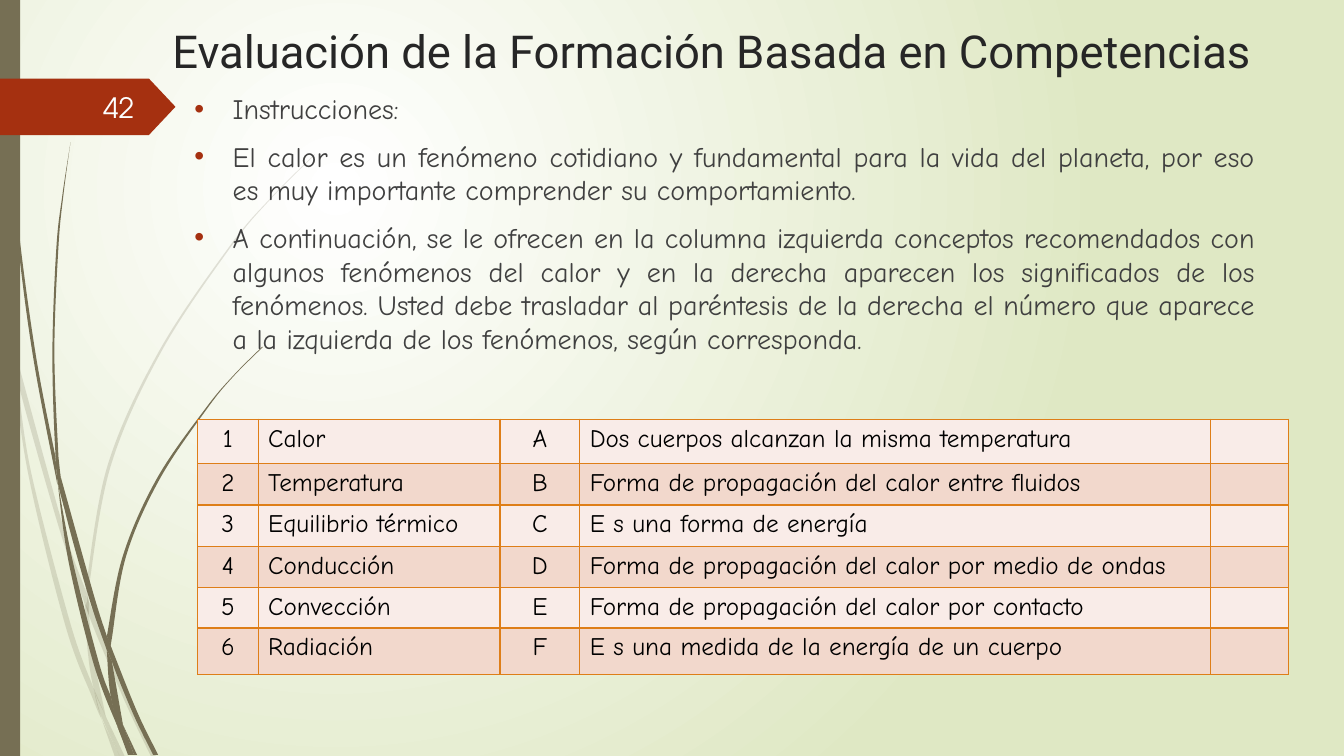
from pptx import Presentation
from pptx.dml.color import RGBColor
from pptx.enum.shapes import MSO_SHAPE
from pptx.enum.text import MSO_ANCHOR, PP_ALIGN
from pptx.oxml.xmlchemy import OxmlElement
from pptx.util import Inches, Pt

RECTANGLE, PENTAGON = MSO_SHAPE.RECTANGLE, MSO_SHAPE.PENTAGON
TOP, MIDDLE = MSO_ANCHOR.TOP, MSO_ANCHOR.MIDDLE
LEFT, CENTER, RIGHT, JUSTIFY = PP_ALIGN.LEFT, PP_ALIGN.CENTER, PP_ALIGN.RIGHT, PP_ALIGN.JUSTIFY
BODY_FONT, TITLE_FONT, NUMBER_FONT = "Comic Neue", "Roboto", "TeX Gyre Adventor"
OLIVE, RUST, ORANGE = "766F54", "A53010", "DE7E18"
ROW_FILLS = ["F9ECE8", "F2D8CC"]

# Each blade of grass: one edge downwards, the other edge back up
FAINT_BLADES = [
    ([(0, 2.82), (0, 2.99)], [(0.1, 3.44), (0.11, 3.5), (0.09, 3.22), (0, 2.82)]),
    ([(0.14, 3.45), (0.17, 3.76), (0.58, 5.22), (0.84, 5.99)], [(0.85, 5.86), (0.62, 5.2), (0.14, 3.45)]),
    ([(0.88, 5.96), (0.88, 6.1), (1.23, 6.94), (1.5, 7.51)], [(1.55, 7.51), (1.27, 6.92), (0.88, 5.96)]),
    ([(1.05, 7.11), (1.19, 7.51)], [(1.24, 7.51), (1.05, 7.11)]),
    ([(0.11, 3.5), (0.28, 4.7), (0.65, 6.21), (0.92, 6.93), (1.01, 7.14)],
     [(0.93, 6.83), (0.7, 6.19), (0.31, 4.69), (0.17, 3.76), (0.11, 3.5)]),
    ([(0.84, 5.99), (0.87, 6.46), (0.93, 6.83), (1.05, 7.11)], [(0.91, 6.46), (0.88, 6.08), (0.84, 5.99)]),
    ([(3.12, 1.53), (2.68, 1.97), (2.28, 2.44), (1.58, 3.48), (1.07, 4.61), (0.85, 5.84)],
     [(0.88, 5.96), (0.88, 5.84), (1.1, 4.62), (1.6, 3.49), (2.29, 2.45), (2.68, 1.98), (3.12, 1.54)]),
    ([(1.01, 7.14), (1.14, 7.51)], [(1.19, 7.51), (1.01, 7.14)]),
    ([(0.85, 5.86), (0.84, 5.99)], [(0.88, 6.1), (0.88, 5.96), (0.85, 5.86)]),
    ([(0.93, 6.83), (0.99, 7.07), (1.19, 7.51)], [(1.05, 7.11), (0.93, 6.83)]),
]
DARK_BLADES = [
    ([(0.03, 0), (0.03, 0.48), (0.07, 1.1), (0.17, 2.33), (0.33, 3.55), (0.57, 4.81)],
     [(0.55, 4.53), (0.36, 3.55), (0.19, 2.32), (0.08, 1.09), (0.05, 0.48), (0.03, 0)]),
    ([(0.6, 4.72), (0.64, 5.05), (0.88, 5.92), (1.06, 6.45)], [(1.06, 6.31), (0.93, 5.9), (0.6, 4.72)]),
    ([(1.1, 6.41), (1.11, 6.56), (1.32, 7.08), (1.52, 7.49)], [(1.57, 7.49), (1.36, 7.06), (1.1, 6.41)]),
    ([(0.57, 4.77), (0.68, 5.57), (0.93, 6.59), (1.17, 7.22)],
     [(1.1, 6.91), (0.98, 6.57), (0.72, 5.56), (0.57, 4.77)]),
    ([(0.7, 1.41), (0.62, 1.93), (0.56, 2.45), (0.52, 3.49), (0.55, 4.49), (0.6, 4.72)],
     [(0.58, 4.53), (0.54, 3.49), (0.58, 2.45), (0.63, 1.93), (0.7, 1.41)]),
    ([(1.22, 7.19), (1.33, 7.49)], [(1.36, 7.49), (1.22, 7.19)]),
    ([(0.55, 4.49), (0.57, 4.77), (0.64, 5.05)], [(0.6, 4.72), (0.55, 4.49)]),
    ([(2.6, 3.44), (2.31, 3.73), (2.04, 4.05), (1.56, 4.74), (1.22, 5.51), (1.06, 6.31)],
     [(1.1, 6.41), (1.11, 6.33), (1.25, 5.52), (1.58, 4.76), (2.05, 4.06), (2.31, 3.74), (2.61, 3.44)]),
    ([(1.17, 7.22), (1.27, 7.49)], [(1.31, 7.49), (1.17, 7.22)]),
    ([(1.06, 6.45), (1.1, 6.91), (1.22, 7.19)], [(1.11, 6.56), (1.06, 6.45)]),
    ([(1.06, 6.31), (1.06, 6.45)], [(1.11, 6.56), (1.1, 6.41), (1.06, 6.31)]),
    ([(1.1, 6.91), (1.17, 7.22), (1.3, 7.49)], [(1.33, 7.49), (1.22, 7.19), (1.1, 6.91)]),
]

INSTRUCTIONS = [
    "Instrucciones:",
    "El calor es un fenómeno cotidiano y fundamental para la vida del planeta, por eso es muy "
    "importante comprender su comportamiento.",
    "A continuación, se le ofrecen en la columna izquierda conceptos recomendados con algunos "
    "fenómenos del calor y en la derecha aparecen los significados de los fenómenos. Usted debe "
    "trasladar al paréntesis de la derecha el número que aparece a la izquierda de los "
    "fenómenos, según corresponda.",
]
CONCEPTS = [
    ("Calor", "Dos cuerpos alcanzan la misma temperatura"),
    ("Temperatura", "Forma de propagación del calor entre fluidos"),
    ("Equilibrio térmico", "E s una forma de energía"),
    ("Conducción", "Forma de propagación del calor por medio de ondas"),
    ("Convección", "Forma de propagación del calor por contacto"),
    ("Radiación", "E s una medida de la energía de un cuerpo"),
]
COLUMN_WIDTHS = [0.6, 2.4, 0.79, 6.26, 0.77]
ROW_HEIGHTS = [0.44, 0.41, 0.41, 0.41, 0.36, 0.46]


def color(hex_string):
    return RGBColor.from_string(hex_string)


def add_element(parent, tag, **attributes):
    element = OxmlElement(tag)
    for name, value in attributes.items():
        element.set(name, str(value))
    parent.append(element)
    return element


def paint(shape, fill):
    shape.shadow.inherit = False
    shape.fill.solid()
    shape.fill.fore_color.rgb = color(fill)
    shape.line.fill.background()


def write(paragraph, text, font=BODY_FONT, size=18, fill="000000", align=LEFT):
    paragraph.alignment = align
    run = paragraph.add_run()
    run.text = text
    run.font.name = font
    run.font.size = Pt(size)
    run.font.color.rgb = color(fill)


def add_text_frame(slide, box, anchor=TOP):
    frame = slide.shapes.add_textbox(*map(Inches, box)).text_frame
    frame.word_wrap = True
    frame.vertical_anchor = anchor
    return frame


def curve_controls(points):
    """Return two Bézier controls and an end for each step of a smooth curve through points."""
    padded = [points[0], *points, points[-1]]
    controls = []
    for a, b, c, d in zip(padded, padded[1:], padded[2:], padded[3:]):
        controls.append(tuple(q + (r - p) / 6 for p, q, r in zip(a, b, c)))
        controls.append(tuple(q - (r - p) / 6 for p, q, r in zip(b, c, d)))
        controls.append(c)
    return controls


def set_background(slide):
    fill = slide.background.fill
    fill.gradient()
    for stop, position, hex_string in zip(fill.gradient_stops, (0, 1), ("FFFFFF", "DFE8C4")):
        stop.position = position
        stop.color.rgb = color(hex_string)
    gradient = slide._element.xpath(".//p:bgPr/a:gradFill")[0]
    for linear in gradient.xpath("a:lin"):
        gradient.remove(linear)
    circle = add_element(gradient, "a:path", path="circle")
    add_element(circle, "a:fillToRect", l=50000, t=50000, r=100000, b=100000)


def add_blades(slide, blades, opacity=100):
    for down, up in blades:
        controls = curve_controls(down) + [down[-1], up[0], up[0]] + curve_controls(up)
        start, *others = [(1000 * x, 1000 * y) for x, y in [down[0], *controls]]
        builder = slide.shapes.build_freeform(*start, scale=Inches(1) / 1000)
        builder.add_line_segments(others, close=True)
        blade = builder.convert_to_shape()
        paint(blade, OLIVE)
        segments = blade._element.xpath(".//a:lnTo")
        for triple in zip(segments[::3], segments[1::3], segments[2::3]):
            curve = OxmlElement("a:cubicBezTo")
            triple[0].addprevious(curve)
            for segment in triple:
                curve.append(segment[0])
                segment.getparent().remove(segment)
        if opacity < 100:
            solid_color = blade._element.xpath("./p:spPr/a:solidFill/a:srgbClr")[0]
            add_element(solid_color, "a:alpha", val=opacity * 1000)


def add_page_tag(slide, box, number):
    left, top, width, height = box
    tag = slide.shapes.add_shape(PENTAGON, *map(Inches, box))
    tag.adjustments[0] = 0.47
    paint(tag, RUST)
    frame = add_text_frame(slide, (left + 0.59, top + 0.08, width - 0.9, height - 0.16), MIDDLE)
    write(frame.paragraphs[0], number, NUMBER_FONT, 20, "FEFFFF", RIGHT)


def add_instructions(slide, box, texts):
    frame = add_text_frame(slide, box)
    for index, text in enumerate(texts):
        paragraph = frame.add_paragraph() if index else frame.paragraphs[0]
        write(paragraph, text, size=20, fill="404040", align=JUSTIFY)
        paragraph.space_before = Pt(10)
        properties = paragraph._p.get_or_add_pPr()
        properties.set("marL", str(Inches(0.38)))
        properties.set("indent", str(-Inches(0.38)))
        add_element(add_element(properties, "a:buClr"), "a:srgbClr", val=RUST)
        add_element(properties, "a:buFont", typeface="Arial")
        add_element(properties, "a:buChar", char="•")


def set_borders(cell, hex_string):
    properties = cell._tc.get_or_add_tcPr()
    for index, tag in enumerate(("a:lnL", "a:lnR", "a:lnT", "a:lnB")):
        line = add_element(properties, tag, w=Pt(1))
        add_element(add_element(line, "a:solidFill"), "a:srgbClr", val=hex_string)
        properties.insert(index, line)


def add_matching_table(slide, box, concepts):
    table = slide.shapes.add_table(len(concepts), len(COLUMN_WIDTHS), *map(Inches, box)).table
    for column, width in zip(table.columns, COLUMN_WIDTHS):
        column.width = Inches(width)
    for index, (concept, meaning) in enumerate(concepts):
        table.rows[index].height = Inches(ROW_HEIGHTS[index])
        for column, text in enumerate([str(index + 1), concept, "ABCDEF"[index], meaning, ""]):
            cell = table.cell(index, column)
            cell.fill.solid()
            cell.fill.fore_color.rgb = color(ROW_FILLS[index % 2])
            set_borders(cell, ORANGE)
            paragraph = cell.text_frame.paragraphs[0]
            if text:
                write(paragraph, text, align=LEFT if column % 2 else CENTER)
            else:
                add_element(paragraph._p, "a:endParaRPr", sz=1200)


def main():
    presentation = Presentation()
    presentation.slide_width, presentation.slide_height = Inches(13.33), Inches(7.5)
    slide = presentation.slides.add_slide(presentation.slide_layouts[6])
    set_background(slide)
    add_blades(slide, FAINT_BLADES, opacity=20)
    add_blades(slide, DARK_BLADES)
    paint(slide.shapes.add_shape(RECTANGLE, 0, 0, Inches(0.2), Inches(7.5)), OLIVE)
    add_page_tag(slide, (-0.01, 0.78, 1.75, 0.56), "42")
    add_instructions(slide, (1.83, 0.86, 10.72, 6.35), INSTRUCTIONS)
    title = add_text_frame(slide, (1.53, 0.18, 11.06, 0.68)).paragraphs[0]
    write(title, "Evaluación de la Formación Basada en Competencias", TITLE_FONT, 32.4, "262626", CENTER)
    add_matching_table(slide, (1.96, 4.16, 10.83, 2.52), CONCEPTS)
    presentation.save("out.pptx")


if __name__ == "__main__":
    main()
